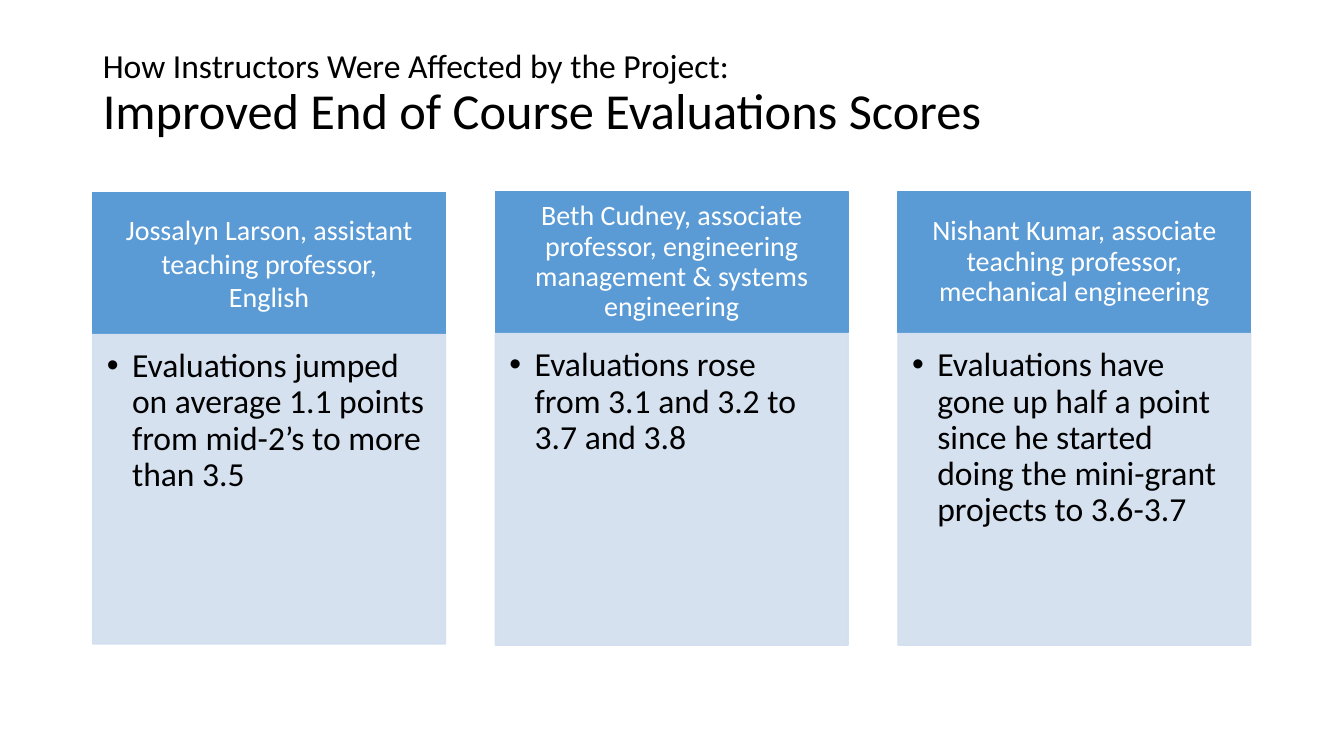
from lxml import etree
from pptx import Presentation
from pptx.dml.color import RGBColor
from pptx.enum.shapes import MSO_SHAPE
from pptx.enum.text import MSO_ANCHOR, MSO_AUTO_SIZE, PP_ALIGN
from pptx.oxml.ns import qn
from pptx.util import Pt

RECTANGLE = MSO_SHAPE.RECTANGLE
TOP, MIDDLE = MSO_ANCHOR.TOP, MSO_ANCHOR.MIDDLE
LEFT, CENTER = PP_ALIGN.LEFT, PP_ALIGN.CENTER
NO_FIT = MSO_AUTO_SIZE.NONE

THEME = {
    "font": "Calibri",
    "black": RGBColor(0x00, 0x00, 0x00),
    "white": RGBColor(0xFF, 0xFF, 0xFF),
    "blue": RGBColor(0x5B, 0x9B, 0xD5),
    "pale": RGBColor(0xD2, 0xDE, 0xEF),
    "pale_alpha": "90000",
    "headline": Pt(36),
    "lead": Pt(24),
    "name": Pt(20),
    "result": Pt(24),
}

COLUMN_LEFT, COLUMN_PITCH, COLUMN_WIDTH = 66.24, 287.6, 252
NAME_HEIGHT, RESULT_GAP = 100.8, 0.7

INSTRUCTORS = [
    (137.5, 221, 1.0, "Jossalyn Larson, assistant teaching professor,\vEnglish",
     "Evaluations jumped on average 1.1 points from mid-2’s to more than 3.5"),
    (136.8, 222.5, 0.9, "Beth Cudney, associate professor, engineering management & systems engineering",
     "Evaluations rose from 3.1 and 3.2 to 3.7 and 3.8"),
    (136.8, 222.5, 0.9, "Nishant Kumar, associate teaching professor, mechanical engineering",
     "Evaluations have gone up half a point since he started doing the mini-grant projects to 3.6-3.7"),
]

NAME_FRAME = {"word_wrap": True, "vertical_anchor": MIDDLE, "margin_left": Pt(11.52),
              "margin_right": Pt(11.52), "margin_top": Pt(6.48), "margin_bottom": Pt(6.48)}
RESULT_FRAME = {"word_wrap": True, "vertical_anchor": TOP, "margin_left": Pt(10.08),
                "margin_right": Pt(13.68), "margin_top": Pt(10.08), "margin_bottom": Pt(15.12)}


def apply_format(target, values):
    for attribute, value in values.items():
        setattr(target, attribute, value)


def add_block(slide, bounds, color, frame_format, paragraph_format, font_format, text):
    block = slide.shapes.add_shape(RECTANGLE, *[Pt(length) for length in bounds])
    block.shadow.inherit = False
    block.fill.solid()
    block.fill.fore_color.rgb = color
    block.line.color.rgb = color
    block.line.width = Pt(1)
    apply_format(block.text_frame, frame_format)
    block.text_frame.text = text
    paragraph = block.text_frame.paragraphs[0]
    apply_format(paragraph, paragraph_format)
    for run in paragraph.runs:
        apply_format(run.font, {"name": THEME["font"], "size": font_format["size"]})
        run.font.color.rgb = font_format["color"]
    return block


prs = Presentation()
prs.slide_width, prs.slide_height = Pt(960), Pt(540)
slide = prs.slides.add_slide(prs.slide_layouts[5])

title = slide.shapes.title
apply_format(title, {"left": Pt(66.24), "top": Pt(15.84), "width": Pt(828), "height": Pt(104.4)})
apply_format(title.text_frame, {"word_wrap": True, "vertical_anchor": MIDDLE, "auto_size": NO_FIT})
heading = title.text_frame.paragraphs[0]
apply_format(heading, {"alignment": LEFT, "line_spacing": 0.9})
lead = heading.add_run()
lead.text = "How Instructors Were Affected by the Project:"
heading.add_line_break()
headline = heading.add_run()
headline.text = "Improved End of Course Evaluations Scores"
for run, size in ((lead, THEME["lead"]), (headline, THEME["headline"])):
    apply_format(run.font, {"name": THEME["font"], "size": size})
    run.font.color.rgb = THEME["black"]
heading._p.find(qn("a:br")).get_or_add_rPr().set("sz", "2400") if hasattr(
    heading._p.find(qn("a:br")), "get_or_add_rPr") else etree.SubElement(
    heading._p.find(qn("a:br")), qn("a:rPr"), sz="2400")

for column, (top, result_height, name_spacing, instructor, result) in enumerate(INSTRUCTORS):
    left = COLUMN_LEFT + column * COLUMN_PITCH
    add_block(slide, (left, top, COLUMN_WIDTH, NAME_HEIGHT), THEME["blue"], NAME_FRAME,
              {"alignment": CENTER, "line_spacing": name_spacing},
              {"size": THEME["name"], "color": THEME["white"]}, instructor)
    result_top = top + NAME_HEIGHT + RESULT_GAP
    panel = add_block(slide, (left, result_top, COLUMN_WIDTH, result_height), THEME["pale"],
                      RESULT_FRAME, {"alignment": LEFT, "line_spacing": 0.9},
                      {"size": THEME["result"], "color": THEME["black"]}, result)
    for color in panel._element.spPr.iter(qn("a:srgbClr")):
        etree.SubElement(color, qn("a:alpha"), val=THEME["pale_alpha"])
    properties = panel.text_frame.paragraphs[0]._p.get_or_add_pPr()
    properties.set("marL", str(Pt(18)))
    properties.set("indent", str(-Pt(18)))
    etree.SubElement(properties, qn("a:buFont"), typeface="Arial")
    etree.SubElement(properties, qn("a:buChar"), char="•")

prs.save("out.pptx")
